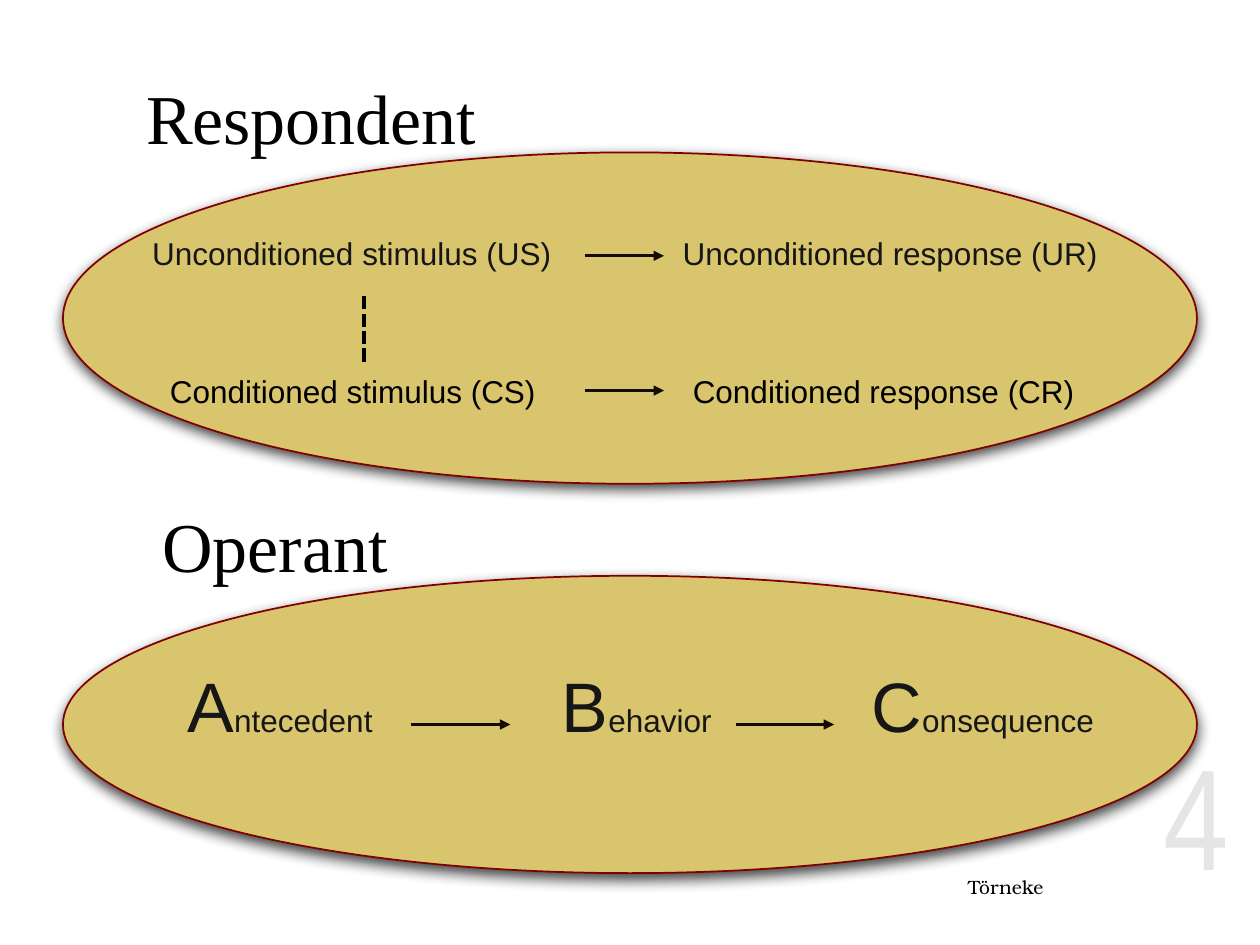
from lxml import etree
from pptx import Presentation
from pptx.dml.color import RGBColor
from pptx.enum.dml import MSO_LINE
from pptx.enum.shapes import MSO_CONNECTOR, MSO_SHAPE
from pptx.enum.text import MSO_ANCHOR, MSO_AUTO_SIZE, PP_ALIGN
from pptx.oxml.ns import qn
from pptx.util import Inches, Pt

STRAIGHT, OVAL = MSO_CONNECTOR.STRAIGHT, MSO_SHAPE.OVAL
DASH = MSO_LINE.SQUARE_DOT
LEFT, RIGHT = PP_ALIGN.LEFT, PP_ALIGN.RIGHT
TOP, MIDDLE = MSO_ANCHOR.TOP, MSO_ANCHOR.MIDDLE
NO_FIT = MSO_AUTO_SIZE.NONE

COLORS = {"gold": "D8C56D", "maroon": "800000", "black": "000000",
          "ink": "161616", "arrow": "140C02"}

# Content: places in inches, sizes in points
HEADING = ("Times New Roman", 40, "black")
RESPONDENT = ("Respondent", (1.06, 0.54, 2.87, 0.77))
OPERANT = ("Operant", (1.19, 3.94, 2.07, 0.77))
ELLIPSES = [(4.57, 2.36), (1.21, 2.63)]  # top, height
TERMS = [  # text, left, top, colour
    ("Unconditioned stimulus (US)", 1.11, 1.81, "ink"),
    ("Unconditioned response (UR)", 5.32, 1.81, "ink"),
    ("Conditioned stimulus (CS)", 1.25, 2.9, "black"),
    ("Conditioned response (CR)", 5.4, 2.9, "black"),
]
ABC = [("A", "ntecedent", 1.39), ("B", "ehavior", 4.36), ("C", "onsequence", 6.82)]
ARROWS = [(4.64, 5.27, 2.03), (4.64, 5.27, 3.1),  # from x, to x, y
          (3.26, 4.05, 5.75), (5.84, 6.62, 5.75)]
PAIRING = (2.89, 2.35, 2.89, 2.9)


def rgb(name):
    return RGBColor.from_string(COLORS[name])


def write(shape, runs, align=LEFT, anchor=TOP, wrap=False):
    """Fill a shape with one paragraph of (text, font, size, colour) runs."""
    tf = shape.text_frame
    tf.auto_size, tf.word_wrap, tf.vertical_anchor = NO_FIT, wrap, anchor
    p = tf.paragraphs[0]
    p.alignment = align
    for text, font, size, color in runs:
        r = p.add_run()
        r.text = text
        r.font.name, r.font.size = font, Pt(size)
        r.font.color.rgb = rgb(color)
    return p


def add_text(box, runs, **layout):
    return write(s.shapes.add_textbox(*map(Inches, box)), runs, **layout)


def add_line(ends, color, width):
    line = s.shapes.add_connector(STRAIGHT, *map(Inches, ends))
    line.line.color.rgb, line.line.width = rgb(color), Pt(width)
    etree.SubElement(line._element.spPr, qn("a:effectLst"))
    return line


def add_alpha(color_element, percent):
    etree.SubElement(color_element, qn("a:alpha"), val=str(percent * 1000))


def add_shadow(shape):
    shape.shadow.inherit = False
    effects = shape._element.spPr.find(qn("a:effectLst"))
    shadow = etree.SubElement(effects, qn("a:outerShdw"), blurRad=str(Pt(8)),
                              dist=str(Pt(3)), dir="5400000", rotWithShape="0")
    add_alpha(etree.SubElement(shadow, qn("a:srgbClr"), val=COLORS["black"]), 75)


prs = Presentation()
prs.slide_width, prs.slide_height = Inches(10), Inches(7.5)
s = prs.slides.add_slide(prs.slide_layouts[5])

# Footer and pale slide number
add_text((4.31, 6.9, 4.07, 0.28), [("Törneke", "TeX Gyre Bonum", 11, "black")],
         align=RIGHT, anchor=MIDDLE, wrap=True)
number = add_text((8.23, 5.99, 1.62, 0.93), [("4", "Arial Narrow", 82, "black")],
                  align=RIGHT, anchor=MIDDLE, wrap=True)
add_alpha(number.runs[0]._r.find(".//" + qn("a:srgbClr")), 10)

# Ellipses
for top, height in ELLIPSES:
    oval = s.shapes.add_shape(OVAL, *map(Inches, (0.5, top, 9, height)))
    oval.fill.solid()
    oval.fill.fore_color.rgb = rgb("gold")
    oval.line.color.rgb, oval.line.width = rgb("maroon"), Pt(1)
    add_shadow(oval)

# Headings
title = s.shapes.title
text, box = RESPONDENT
title.left, title.top, title.width, title.height = map(Inches, box)
write(title, [(text, *HEADING)])
text, box = OPERANT
add_text(box, [(text, *HEADING)])

# Respondent terms
for text, left, top, color in TERMS:
    add_text((left, top, 3.5, 0.4), [(text, "Arial", 18, color)])

# Operant terms with large initials
for initial, rest, left in ABC:
    add_text((left, 5.21, 1.98, 0.77),
             [(initial, "Arial", 40, "ink"), (rest, "Arial", 18, "ink")])

# Arrows and dashed pairing line
for x1, x2, y in ARROWS:
    arrow = add_line((x1, y, x2, y), "arrow", 1.5)
    etree.SubElement(arrow.line._get_or_add_ln(), qn("a:tailEnd"), type="triangle")
add_line(PAIRING, "black", 2.5).line.dash_style = DASH

prs.save("out.pptx")
